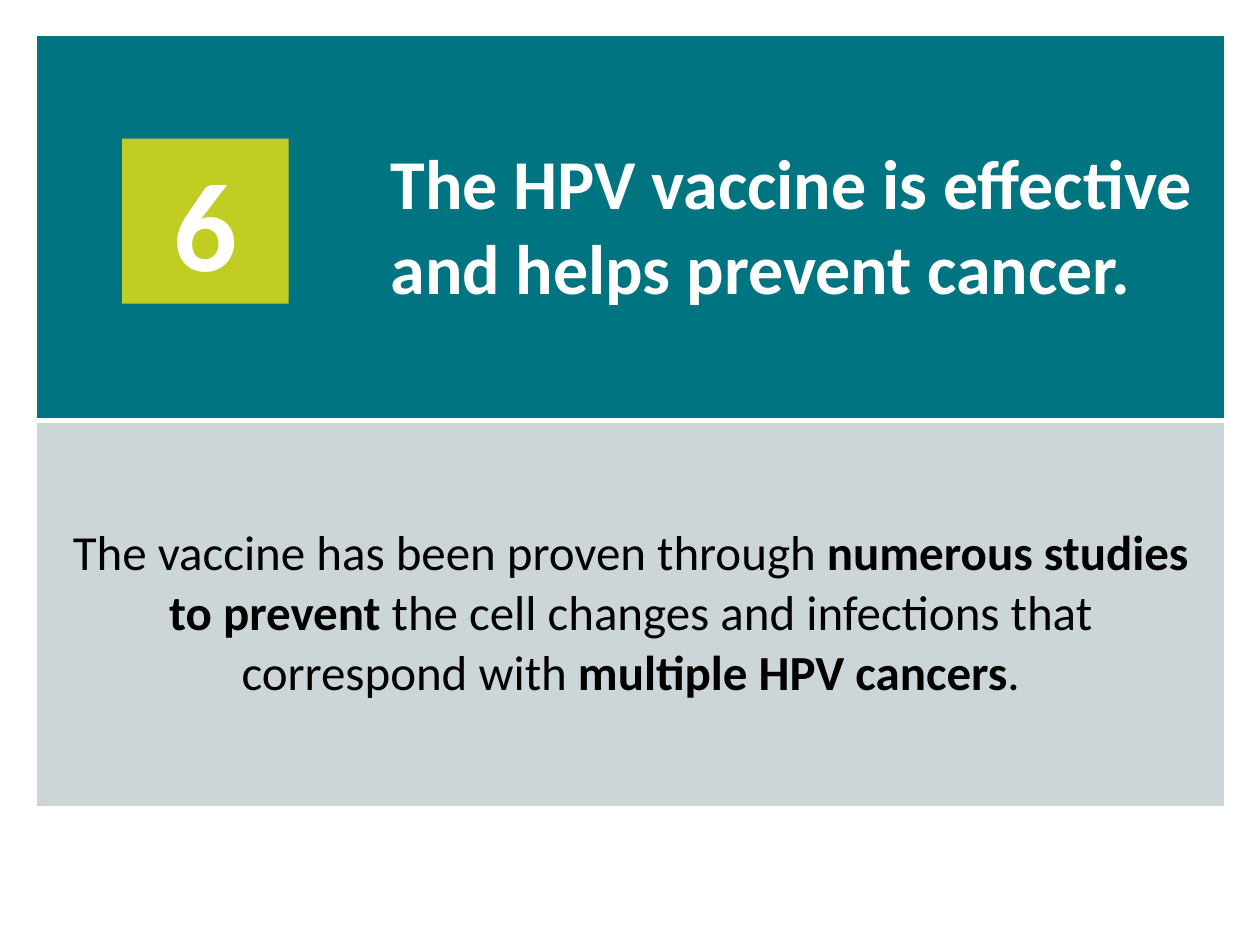
from pptx import Presentation
from pptx.dml.color import RGBColor as Rgb
from pptx.enum.shapes import MSO_SHAPE as Kind
from pptx.enum.text import MSO_ANCHOR as Anchor, PP_ALIGN as Align
from pptx.oxml.ns import qn
from pptx.util import Inches, Pt
from lxml.etree import SubElement as Sub

WHITE, BLACK, TEAL, GREY, LIME = "FFFFFF", "000000", "007481", "CCD6D8", "C1CD23"
COLS, ROW = (2.66, 6.77), 3.06
NUMBER = [("6", True)]
TITLE = [("The HPV vaccine is effective and helps prevent cancer.", True)]
BODY = [
    ("The vaccine has been proven through ", False),
    ("numerous studies to prevent ", True),
    ("the cell changes and infections that correspond with ", False),
    ("multiple HPV cancers", True),
    (".", False),
]
EDGES = {
    (0, 0): {"L": 1, "R": 0, "T": 1, "B": 3},
    (0, 1): {"L": 0, "R": 1, "T": 1, "B": 3},
    (1, 0): {"L": 1, "R": 1, "T": 3, "B": 1},
    (1, 1): {"L": 0, "R": 1, "T": 3, "B": 1},
}


def paint(part, color):
    """Give a shape or cell a solid fill."""
    part.fill.solid()
    part.fill.fore_color.rgb = Rgb.from_string(color)


def write(frame, runs, size, color, align):
    """Write one paragraph run by run."""
    para = frame.paragraphs[0]
    para.alignment = align
    for text, bold in runs:
        run = para.add_run()
        run.text = text
        font = run.font
        font.name, font.size, font.bold = "Calibri", Pt(size), bold
        font.color.rgb = Rgb.from_string(color)


def border(cell, edges):
    """Draw white cell borders, or none where the width is zero."""
    props = cell._tc.get_or_add_tcPr()
    for side, width in edges.items():
        line = Sub(props, qn(f"a:ln{side}"), w=str(Pt(width)))
        if width:
            Sub(Sub(line, qn("a:solidFill")), qn("a:srgbClr"), val=WHITE)
        else:
            Sub(line, qn("a:noFill"))


def main():
    """Build the slide and save it."""
    deck = Presentation()
    deck.slide_width, deck.slide_height = Inches(10), Inches(7.5)
    shapes = deck.slides.add_slide(deck.slide_layouts[6]).shapes

    grid = shapes.add_table(2, 2, Inches(0.29), Inches(0.28),
                            Inches(sum(COLS)), Inches(2 * ROW)).table
    for col, width in zip(grid.columns, COLS):
        col.width = Inches(width)
    for row in grid.rows:
        row.height = Inches(ROW)
    for (row, col), edges in EDGES.items():
        cell = grid.cell(row, col)
        border(cell, edges)
        paint(cell, (TEAL, GREY)[row])
        cell.vertical_anchor = Anchor.MIDDLE
        cell.margin_left = cell.margin_right = Inches(0.15)
        cell.margin_top = cell.margin_bottom = Inches(0.15)
    grid.cell(1, 0).merge(grid.cell(1, 1))
    write(grid.cell(0, 1).text_frame, TITLE, 40, WHITE, Align.LEFT)
    write(grid.cell(1, 0).text_frame, BODY, 28, BLACK, Align.CENTER)

    badge = shapes.add_shape(Kind.RECTANGLE, Inches(0.97), Inches(1.1),
                             Inches(1.32), Inches(1.31))
    badge.shadow.inherit = False
    paint(badge, LIME)
    badge.line.fill.background()
    badge.text_frame.vertical_anchor = Anchor.MIDDLE
    write(badge.text_frame, NUMBER, 72, WHITE, Align.CENTER)

    deck.save("out.pptx")


if __name__ == "__main__":
    main()
